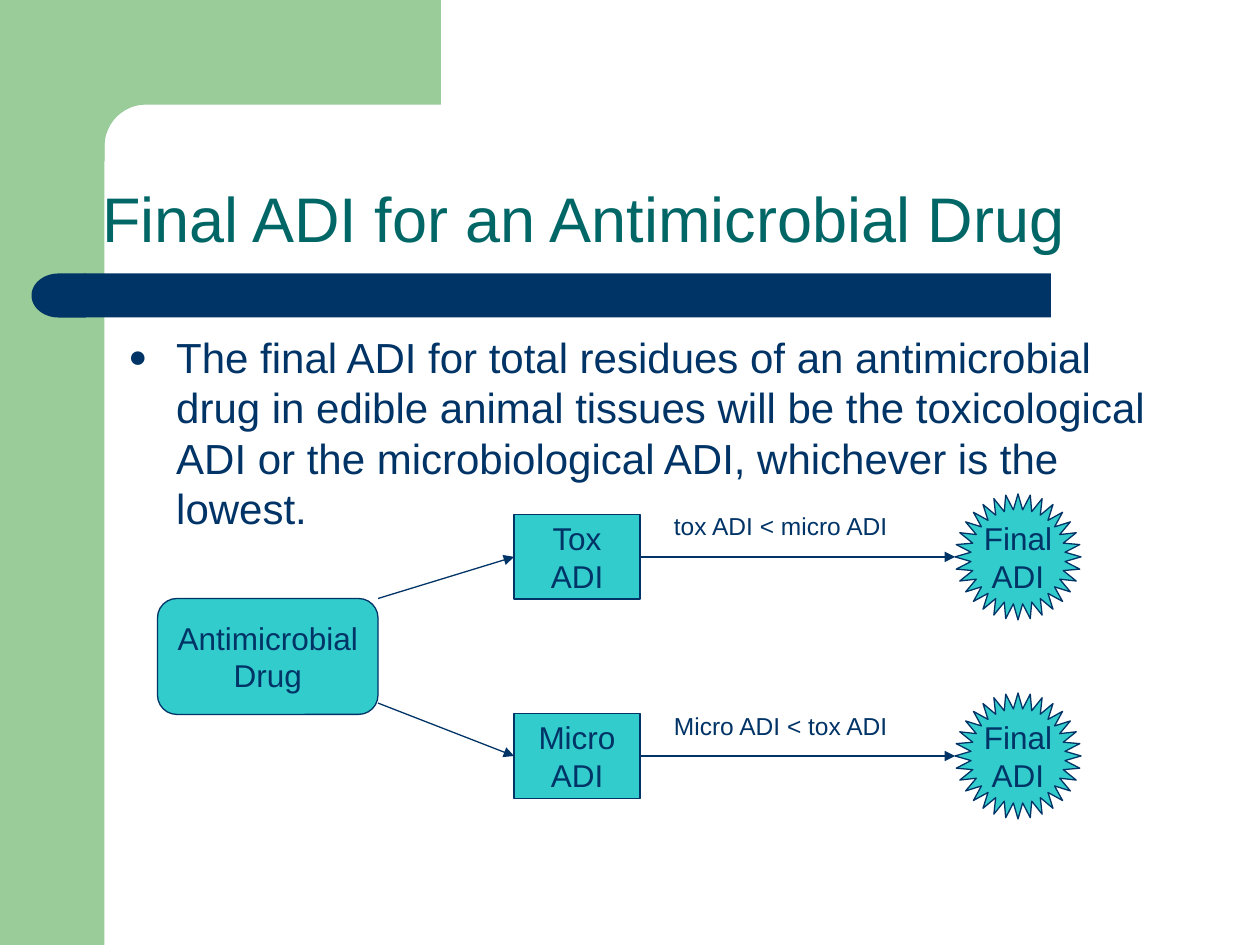
from math import cos, pi, sin

from lxml.etree import SubElement
from pptx import Presentation
from pptx.dml.color import RGBColor
from pptx.enum.shapes import MSO_CONNECTOR, MSO_SHAPE
from pptx.enum.text import MSO_ANCHOR, PP_ALIGN
from pptx.oxml.ns import qn
from pptx.util import Inches, Pt

NAVY = RGBColor(0x00, 0x33, 0x66)
TEAL = RGBColor(0x00, 0x66, 0x66)
TURQUOISE = RGBColor(0x33, 0xCC, 0xCC)
GREEN = RGBColor(0x99, 0xCC, 0x99)
FONT = "Arial"
LEFT, RIGHT = 1, 3


def set_text(text_frame, lines, size, color=NAVY, align=PP_ALIGN.LEFT, wrap=True):
    text_frame.word_wrap = wrap
    text_frame.text = "\n".join(lines)
    for paragraph in text_frame.paragraphs:
        paragraph.alignment = align
        paragraph.font.name = FONT
        paragraph.font.size = Pt(size)
        paragraph.font.color.rgb = color


def paint(shape, color):
    shape.shadow.inherit = False
    shape.fill.solid()
    shape.fill.fore_color.rgb = color
    shape.line.fill.background()


def add_block(slide, kind, left, top, width, height, color):
    shape = slide.shapes.add_shape(
        kind, Inches(left), Inches(top), Inches(width), Inches(height))
    paint(shape, color)
    return shape


def add_node(slide, kind, left, top, width, height, lines):
    shape = add_block(slide, kind, left, top, width, height, TURQUOISE)
    shape.line.color.rgb = NAVY
    shape.line.width = Pt(0.75)
    shape.text_frame.vertical_anchor = MSO_ANCHOR.MIDDLE
    set_text(shape.text_frame, lines, 18, align=PP_ALIGN.CENTER, wrap=False)
    return shape


def add_text(slide, left, top, width, height, text, size, color=NAVY, wrap=True):
    box = slide.shapes.add_textbox(
        Inches(left), Inches(top), Inches(width), Inches(height))
    set_text(box.text_frame, [text], size, color, wrap=wrap)
    return box.text_frame


def add_arrow(slide, start, end):
    arrow = slide.shapes.add_connector(
        MSO_CONNECTOR.STRAIGHT, *(Inches(value) for value in (*start, *end)))
    arrow.line.color.rgb = NAVY
    arrow.line.width = Pt(0.75)
    SubElement(arrow.line._get_or_add_ln(), qn("a:tailEnd"), type="triangle")
    SubElement(arrow._element.spPr, qn("a:effectLst"))
    return arrow


def add_corner(slide):
    center, radius, steps = 1.16, 0.33, 12
    angles = [pi / 2 * step / steps for step in range(steps + 1)]
    arc = [(center - radius * sin(angle), center - radius * cos(angle))
           for angle in angles]
    points = [(3.5, 0), (3.5, 0.83), *arc, (0.83, 1.28), (0.5, 1.28), (0.5, 0)]
    emu_points = [(Inches(x), Inches(y)) for x, y in points]
    builder = slide.shapes.build_freeform(*emu_points[0])
    builder.add_line_segments(emu_points[1:], close=True)
    paint(builder.convert_to_shape(), GREEN)


def add_frame(slide):
    add_block(slide, MSO_SHAPE.RECTANGLE, 0, 0, 0.83, 7.5, GREEN)
    add_corner(slide)
    add_block(slide, MSO_SHAPE.RECTANGLE, 0.67, 2.17, 7.67, 0.35, NAVY)
    cap = add_block(slide, MSO_SHAPE.FLOWCHART_DELAY, 0.25, 2.17, 0.43, 0.35, NAVY)
    cap.rotation = 180


def add_title(slide, text):
    frame = add_text(slide, 0.75, 1.08, 9.25, 1, text, 36, TEAL)
    frame.vertical_anchor = MSO_ANCHOR.BOTTOM
    frame.margin_left = Inches(0.06)
    frame.paragraphs[0].line_spacing = 0.9


def add_bullet(slide, text):
    paragraph = add_text(slide, 0.92, 2.58, 8.41, 4.07, text, 24).paragraphs[0]
    paragraph.space_before = Pt(4.8)
    properties = paragraph._p.get_or_add_pPr()
    properties.set("marL", str(Inches(0.38)))
    properties.set("indent", str(-Inches(0.38)))
    bullet = [("buSzPct", {"val": "75000"}), ("buFont", {"typeface": FONT}),
              ("buChar", {"char": "●"})]
    for position, (tag, attributes) in enumerate(bullet, start=1):
        element = SubElement(properties, qn(f"a:{tag}"), attributes)
        properties.insert(position, element)


def add_branch(slide, middle, drug_exit, name, condition):
    box = add_node(slide, MSO_SHAPE.FLOWCHART_PROCESS,
                   4.08, middle - 0.335, 1, 0.67, [name, "ADI"])
    add_node(slide, MSO_SHAPE.STAR_32_POINT,
             7.58, middle - 0.5, 1, 1, ["Final", "ADI"])
    add_text(slide, 5.25, middle - 0.41, 1.91, 0.33, condition, 14, wrap=False)
    add_arrow(slide, (5.08, middle), (7.58, middle)).begin_connect(box, RIGHT)
    add_arrow(slide, (3, drug_exit), (4.08, middle)).end_connect(box, LEFT)


def main():
    """Build the slide on the final ADI and save it."""
    presentation = Presentation()
    presentation.slide_width = Inches(10)
    presentation.slide_height = Inches(7.5)
    slide = presentation.slides.add_slide(presentation.slide_layouts[6])
    add_frame(slide)
    add_node(slide, MSO_SHAPE.FLOWCHART_ALTERNATE_PROCESS,
             1.25, 4.75, 1.75, 0.92, ["Antimicrobial", "Drug"])
    add_branch(slide, 4.42, 4.75, "Tox", "tox ADI < micro ADI")
    add_branch(slide, 6, 5.58, "Micro", "Micro ADI < tox ADI")
    add_bullet(slide, "The final ADI for total residues of an antimicrobial drug in "
                      "edible animal tissues will be the toxicological ADI or the "
                      "microbiological ADI, whichever is the lowest.")
    add_title(slide, "Final ADI for an Antimicrobial Drug")
    presentation.save("out.pptx")


if __name__ == "__main__":
    main()
